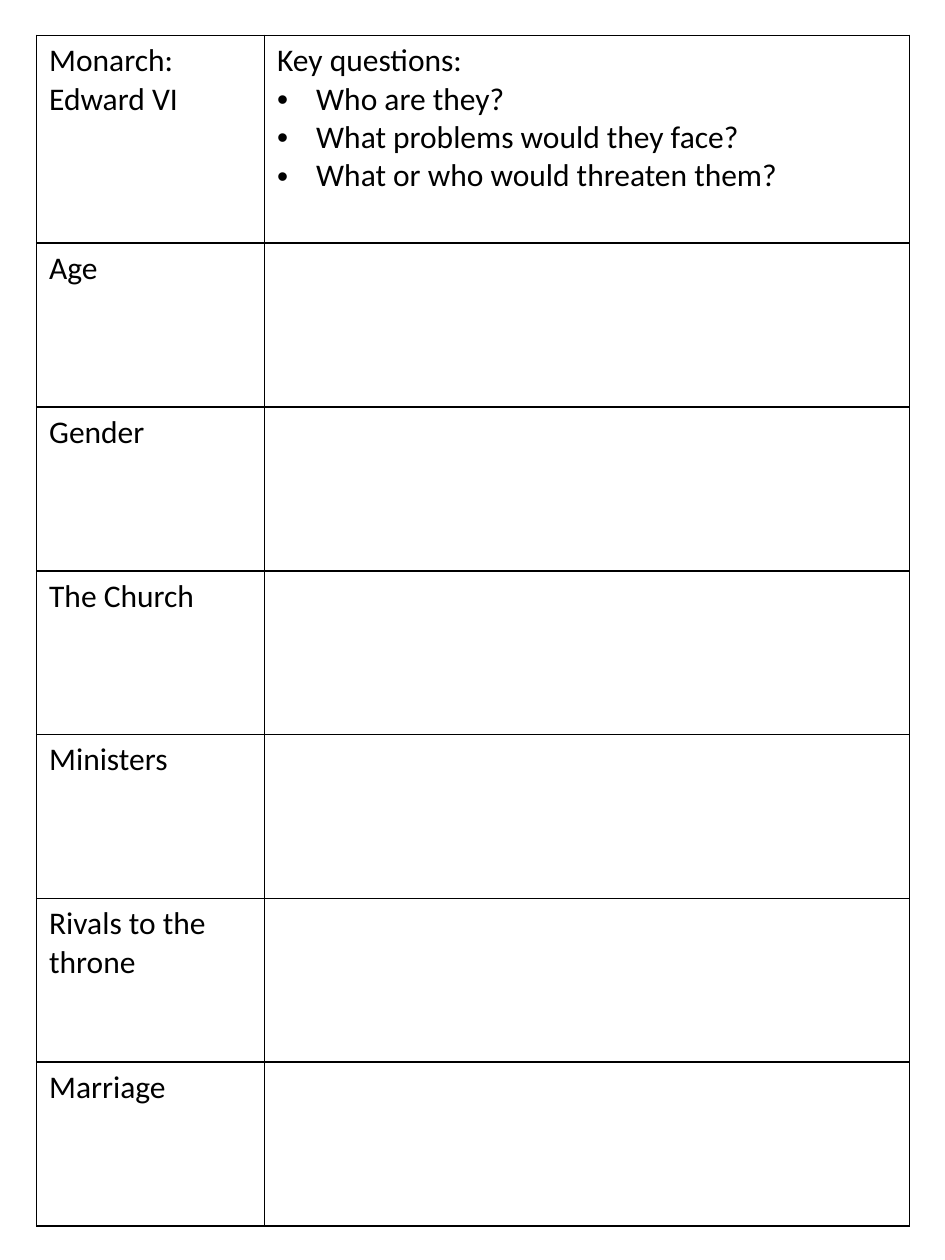
from dataclasses import dataclass

from pptx import Presentation
from pptx.dml.color import RGBColor as Rgb
from pptx.oxml.ns import qn
from pptx.util import Inches, Pt
from lxml.etree import SubElement as Sub

WIDE, HIGH = 7.5, 10
LEFT, TOP = 0.29, 0.28
COLS = (1.81, 5.12)
HEAD, BODY = 1.65, 1.3
INK, PAPER = "000000", "FFFFFF"
FONT, SIZE = "Calibri", 18
INDENT = 0.31


@dataclass
class Row:
    label: str
    high: float = BODY
    lead: str = ""
    points: tuple[str, ...] = ()


ROWS = [
    Row(
        "Monarch: Edward VI",
        HEAD,
        "Key questions:",
        (
            "Who are they?",
            "What problems would they face?",
            "What or who would threaten them?",
        ),
    ),
    *map(Row, ("Age", "Gender", "The Church", "Ministers",
               "Rivals to the throne", "Marriage")),
]


def tint(code: str) -> Rgb:
    return Rgb.from_string(code)


def edge(cell) -> None:
    props = cell._tc.get_or_add_tcPr()
    for side in ("lnL", "lnR", "lnT", "lnB"):
        line = Sub(props, qn(f"a:{side}"), w=str(Pt(1)))
        fill = Sub(line, qn("a:solidFill"))
        Sub(fill, qn("a:srgbClr"), val=INK)


def bullet(para) -> None:
    props = para._p.get_or_add_pPr()
    props.set("marL", str(Inches(INDENT)))
    props.set("indent", str(-Inches(INDENT)))
    Sub(props, qn("a:buFont"), typeface="Arial")
    Sub(props, qn("a:buChar"), char="•")


def write(cell, lead: str, points: tuple[str, ...] = ()) -> None:
    edge(cell)
    cell.fill.solid()
    cell.fill.fore_color.rgb = tint(PAPER)
    frame = cell.text_frame
    frame.text = "\n".join((lead, *points))
    for para in frame.paragraphs[1:]:
        bullet(para)
    for para in frame.paragraphs:
        for font in (para.font, *(run.font for run in para.runs)):
            font.name = FONT
            font.size = Pt(SIZE)
            font.color.rgb = tint(INK)


def draw(slide, rows: list[Row]) -> None:
    total = sum(row.high for row in rows)
    box = [Inches(n) for n in (LEFT, TOP, sum(COLS), total)]
    table = slide.shapes.add_table(len(rows), len(COLS), *box).table
    table.first_row = table.horz_banding = False
    for col, wide in zip(table.columns, COLS):
        col.width = Inches(wide)
    for line, row in zip(table.rows, rows):
        line.height = Inches(row.high)
        label, notes = line.cells
        write(label, row.label)
        write(notes, row.lead, row.points)


def main() -> None:
    deck = Presentation()
    deck.slide_width, deck.slide_height = Inches(WIDE), Inches(HIGH)
    slide = deck.slides.add_slide(deck.slide_layouts[6])
    draw(slide, ROWS)
    deck.save("out.pptx")


if __name__ == "__main__":
    main()
